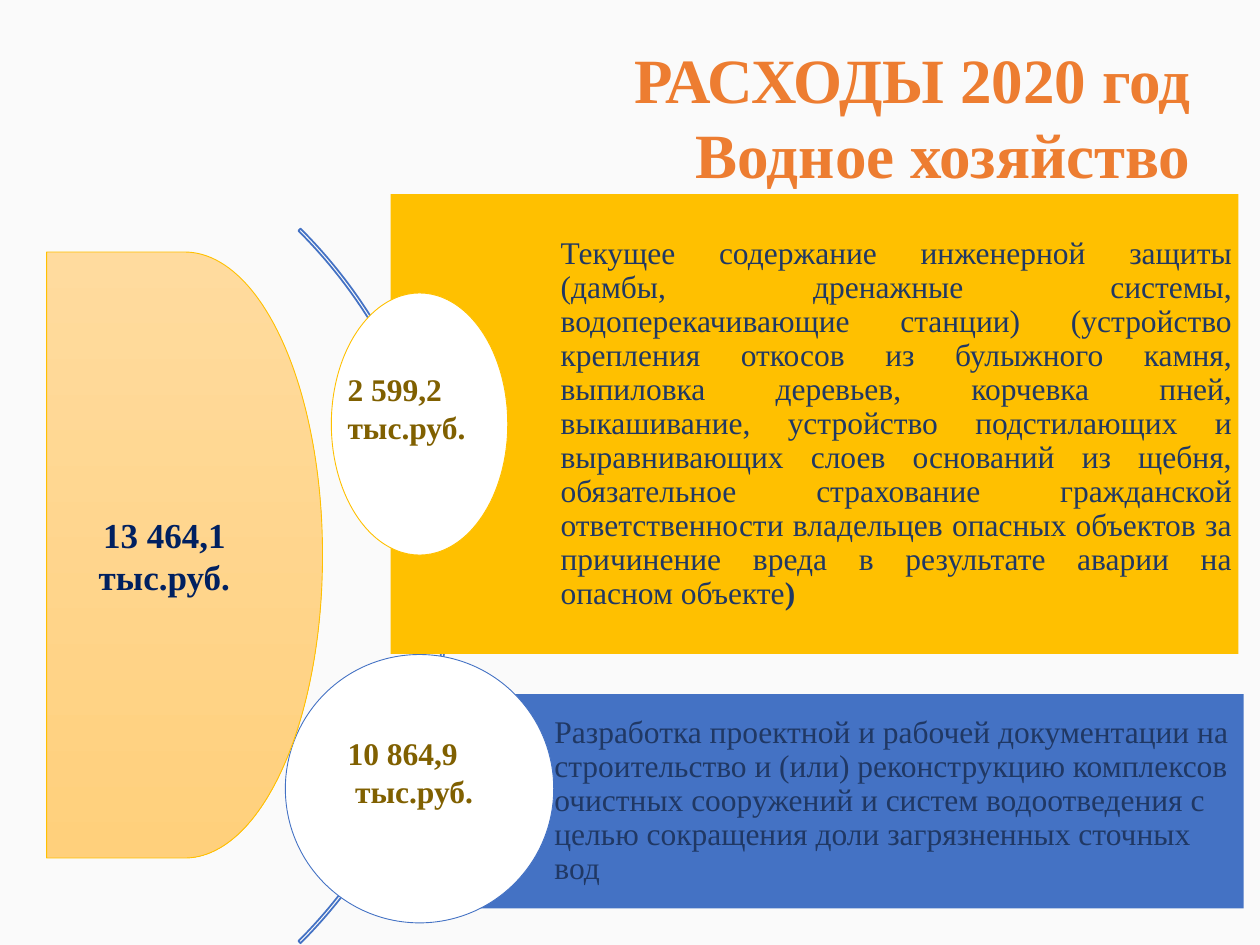
from dataclasses import dataclass

from pptx import Presentation
from pptx import util as u
from pptx.dml.color import RGBColor
from pptx.enum import shapes as sh, text as tx


@dataclass(frozen=True)
class Theme:
    """Colours, font and type sizes of the slide."""
    face: str = "Times New Roman"
    back: str = "FAFAFA"
    head: str = "ED7D31"
    gold: str = "FFC000"
    blue: str = "4472C4"
    white: str = "FFFFFF"
    ink: str = "203864"
    navy: str = "002060"
    brown: str = "806000"
    peach: tuple = ("FFDB9E", "FFD07C")
    big: int = 36
    mid: int = 20
    small: int = 18


T = Theme()
KIND = sh.MSO_SHAPE
SIDE = tx.PP_ALIGN
MID = tx.MSO_ANCHOR.MIDDLE
COLS, ROWS = 10, 7.5
AXIS = 3.33


def grid(*cells):
    """Turn grid columns and rows into lengths."""
    return [u.Inches(c) for c in cells]


def rgb(code):
    """Return a colour for a hex code."""
    return RGBColor.from_string(code)


def put(obj, vals):
    """Set each attribute of an object from a dict."""
    for key, val in vals.items():
        setattr(obj, key, val)


def write(frame, paras, size, hue, bold=False, pad=(.1, .05, .1, .05), form=None, **opts):
    """Fill a text frame with paragraphs made of (text, bold) runs or strings."""
    sides = ("margin_left", "margin_top", "margin_right", "margin_bottom")
    put(frame, {"word_wrap": True, "auto_size": tx.MSO_AUTO_SIZE.NONE,
                **dict(zip(sides, grid(*pad))), **opts})
    for i, runs in enumerate(paras):
        para = frame.paragraphs[0] if i == 0 else frame.add_paragraph()
        put(para, {"alignment": SIDE.LEFT, **(form or {})})
        for words, heavy in [(runs, bold)] if isinstance(runs, str) else runs:
            run = para.add_run()
            run.text = words
            put(run.font, {"name": T.face, "size": u.Pt(size), "bold": heavy})
            run.font.color.rgb = rgb(hue)


def draw(slide, kind, box, fill=None, line=None, width=.5):
    """Add a flat preset shape."""
    shape = slide.shapes.add_shape(kind, *grid(*box))
    shape.shadow.inherit = False
    if fill:
        shape.fill.solid()
        shape.fill.fore_color.rgb = rgb(fill)
    else:
        shape.fill.background()
    if line:
        shape.line.color.rgb = rgb(line)
        shape.line.width = u.Pt(width)
    else:
        shape.line.fill.background()
    return shape


def title(slide, box, lines):
    """Place the heading in the title placeholder."""
    head = slide.shapes.title
    put(head, dict(zip(("left", "top", "width", "height"), grid(*box))))
    write(head.text_frame, lines, T.big, T.head, True, pad=(.1, .08, .1, .05),
          form={"alignment": SIDE.RIGHT}, vertical_anchor=tx.MSO_ANCHOR.TOP)


def arc(slide, box):
    """Draw the thin arc that links the two items."""
    bow = draw(slide, KIND.BLOCK_ARC, box, line=T.blue, width=1)
    for i, val in enumerate((189, 27, .003)):
        bow.adjustments[i] = val


def total(slide, box, words):
    """Draw the shaded panel with the total sum."""
    panel = draw(slide, KIND.FLOWCHART_DELAY, box, line=T.gold)
    panel.fill.gradient()
    panel.fill.gradient_angle = 270
    for stop, hue in zip(panel.fill.gradient_stops, T.peach):
        stop.color.rgb = rgb(hue)
    write(panel.text_frame, [words], T.mid, T.navy, True,
          form={"alignment": SIDE.CENTER}, vertical_anchor=MID)


def item(slide, box, hue, runs, side, oval, lift=0):
    """Draw a text bar with a white oval on its left edge."""
    bar = draw(slide, KIND.RECTANGLE, box, hue)
    write(bar.text_frame, [runs], T.small, T.ink, pad=(1.35, .05, .05, .05),
          form={"alignment": side, "line_spacing": .9}, vertical_anchor=MID)
    wide, high = oval
    top = box[1] + (box[3] - high) / 2 - lift
    draw(slide, KIND.OVAL, (AXIS - wide / 2, top, wide, high), T.white, hue)
    return top


def label(slide, box, lines, inset=0):
    """Write a sum, with its last line set in by a small indent."""
    area = slide.shapes.add_textbox(*grid(*box))
    write(area.text_frame, lines, T.small, T.brown, True, word_wrap=False)
    if inset:
        last = area.text_frame.paragraphs[-1]
        last._p.get_or_add_pPr().set("marL", str(u.Inches(inset)))


def main():
    """Build the slide and save it."""
    deck = Presentation()
    deck.slide_width, deck.slide_height = grid(COLS, ROWS)
    slide = deck.slides.add_slide(deck.slide_layouts[5])
    slide.background.fill.solid()
    slide.background.fill.fore_color.rgb = rgb(T.back)

    title(slide, (.22, .24, 9.33, 1.92), ["РАСХОДЫ 2020 год", "Водное хозяйство"])
    arc(slide, (-4.46, .64, 8.02, 8.02))
    care = [("Текущее содержание инженерной защиты (дамбы, дренажные системы, "
             "водоперекачивающие станции) (устройство крепления откосов из булыжного "
             "камня, выпиловка деревьев, корчевка пней, выкашивание, устройство "
             "подстилающих и выравнивающих слоев оснований из щебня, обязательное "
             "страхование гражданской ответственности владельцев опасных объектов за "
             "причинение вреда в результате аварии на опасном объекте", False),
            (")", True)]
    plan = ("Разработка проектной и рабочей документации на строительство и (или) "
            "реконструкцию комплексов очистных сооружений и систем водоотведения с "
            "целью сокращения доли загрязненных сточных вод")
    first = item(slide, (3.1, 1.54, 6.73, 3.65), T.gold, care, SIDE.JUSTIFY, (1.4, 2.08))
    last = item(slide, (3.05, 5.51, 6.82, 1.7), T.blue, plan, SIDE.LEFT, (2.13, 2.13), .1)
    total(slide, (.37, 2, 2.19, 4.81), "13 464,1 тыс.руб.")
    left = AXIS - .67
    label(slide, (left, first + .56, 1.15, .71), ["2 599,2", "тыс.руб."])
    label(slide, (left, last + .58, 1.21, .71), ["10 864,9", "тыс.руб."], .06)
    deck.save("out.pptx")


if __name__ == "__main__":
    main()
